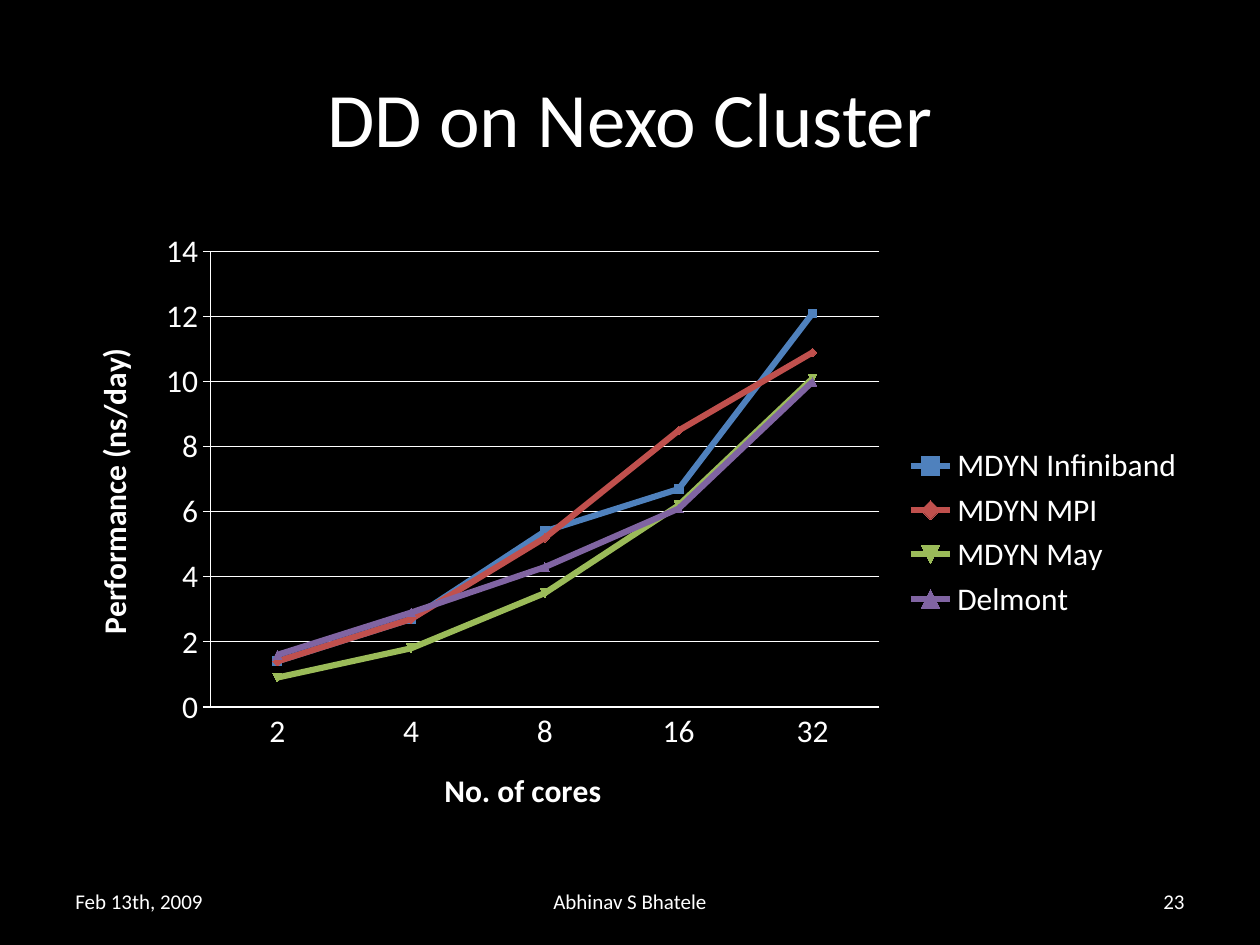
from lxml.etree import SubElement
from pptx import Presentation
from pptx.chart.data import CategoryChartData
from pptx.dml.color import RGBColor
from pptx.enum.chart import XL_CHART_TYPE as ChartType, XL_LEGEND_POSITION as LegendPosition
from pptx.enum.chart import XL_TICK_MARK as TickMark
from pptx.enum.text import MSO_ANCHOR as Anchor, PP_ALIGN as Align
from pptx.oxml.ns import qn
from pptx.util import Inches, Pt

WIDTH, HEIGHT, MARGIN = 10, 7.5, 0.5
CONTENT = WIDTH - 2 * MARGIN
FONT, WHITE, BLACK = "Calibri", "FFFFFF", "000000"
TITLE = "DD on Nexo Cluster"
CORES = ["2", "4", "8", "16", "32"]
SERIES = [
    ("MDYN Infiniband", "4F81BD", [1.4, 2.7, 5.4, 6.7, 12.1]),
    ("MDYN MPI", "C0504D", [1.4, 2.7, 5.2, 8.5, 10.9]),
    ("MDYN May", "9BBB59", [0.9, 1.8, 3.5, 6.2, 10.1]),
    ("Delmont", "8064A2", [1.6, 2.9, 4.3, 6.1, 10]),
]
PLOT_SHARES = {"x": 0.13, "y": 0.05, "w": 0.59, "h": 0.73}
FOOTERS = [
    ("Feb 13th, 2009", 2.33, Align.LEFT),
    ("Abhinav S Bhatele", 3.17, Align.CENTER),
    ("23", 2.33, Align.RIGHT),
]


def color(value):
    return RGBColor.from_string(value)


def style_font(font, size, bold=False):
    font.name, font.size, font.bold = FONT, Pt(size), bold
    font.color.rgb = color(WHITE)


def place(shape, left, top, width, height):
    shape.left, shape.top = Inches(left), Inches(top)
    shape.width, shape.height = Inches(width), Inches(height)


def write(shape, text, size, align):
    frame = shape.text_frame
    frame.text, frame.word_wrap, frame.vertical_anchor = text, True, Anchor.MIDDLE
    paragraph = frame.paragraphs[0]
    paragraph.alignment = align
    style_font(paragraph.font, size)


def style_axis(axis, title, tick):
    axis.has_title = True
    axis.axis_title.text_frame.text = title
    style_font(axis.axis_title.text_frame.paragraphs[0].font, 18, bold=True)
    axis.major_tick_mark, axis.minor_tick_mark = tick, TickMark.NONE
    axis.format.line.color.rgb = color(WHITE)
    axis.format.line.width = Pt(0.75)


def set_plot_layout(chart):
    plot_area = chart._chartSpace.chart.plotArea
    layout = plot_area.find(qn("c:layout"))
    if layout is None:
        layout = SubElement(plot_area, qn("c:layout"))
        plot_area.insert(0, layout)
    manual = SubElement(layout, qn("c:manualLayout"))
    settings = {"layoutTarget": "inner", "xMode": "edge", "yMode": "edge", **PLOT_SHARES}
    for name, value in settings.items():
        SubElement(manual, qn(f"c:{name}")).set("val", str(value))


def add_line_chart(slide):
    data = CategoryChartData()
    data.categories = CORES
    for name, _, values in SERIES:
        data.add_series(name, values)
    chart = slide.shapes.add_chart(
        ChartType.LINE_MARKERS, Inches(MARGIN), Inches(1.75), Inches(CONTENT), Inches(4.95), data
    ).chart
    chart.has_title = False
    style_font(chart.font, 18)
    chart.has_legend = True
    chart.legend.position, chart.legend.include_in_layout = LegendPosition.RIGHT, False
    style_axis(chart.category_axis, "No. of cores", TickMark.NONE)
    value_axis = chart.value_axis
    style_axis(value_axis, "Performance (ns/day)", TickMark.CROSS)
    value_axis.minimum_scale, value_axis.maximum_scale, value_axis.major_unit = 0, 14, 2
    value_axis.has_major_gridlines = True
    gridline = value_axis.major_gridlines.format.line
    gridline.color.rgb, gridline.width = color(WHITE), Pt(0.75)
    chart.plots[0].vary_by_categories = False
    for series, (_, shade, _) in zip(chart.plots[0].series, SERIES):
        series.smooth = False
        series.format.line.color.rgb, series.format.line.width = color(shade), Pt(3.5)
        series.marker.size = 5
        series.marker.format.fill.solid()
        series.marker.format.fill.fore_color.rgb = color(shade)
        series.marker.format.line.color.rgb = color(shade)
    set_plot_layout(chart)


def add_footers(slide):
    gap = (CONTENT - sum(width for _, width, _ in FOOTERS)) / (len(FOOTERS) - 1)
    left = MARGIN
    for text, width, align in FOOTERS:
        box = slide.shapes.add_textbox(0, 0, 0, 0)
        place(box, left, 6.95, width, 0.4)
        write(box, text, 12, align)
        left += width + gap


def main():
    """Build a slide comparing simulation performance by core count."""
    presentation = Presentation()
    presentation.slide_width, presentation.slide_height = Inches(WIDTH), Inches(HEIGHT)
    slide = presentation.slides.add_slide(presentation.slide_layouts[5])
    slide.background.fill.solid()
    slide.background.fill.fore_color.rgb = color(BLACK)
    place(slide.shapes.title, MARGIN, 0.3, CONTENT, 1.25)
    write(slide.shapes.title, TITLE, 44, Align.CENTER)
    add_line_chart(slide)
    add_footers(slide)
    presentation.save("out.pptx")


if __name__ == "__main__":
    main()
